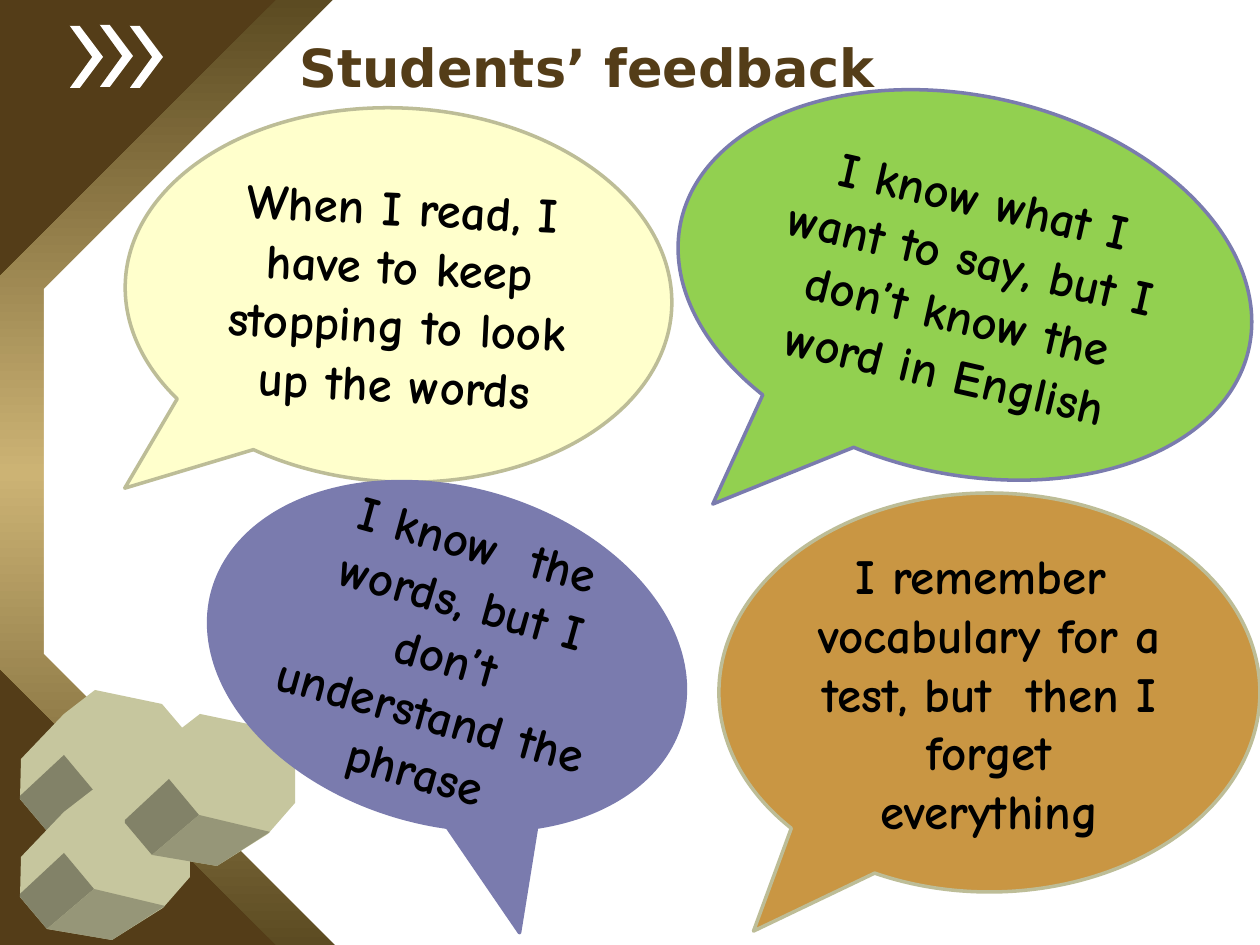
from copy import deepcopy

from pptx import Presentation
from pptx.dml.color import RGBColor
from pptx.enum.shapes import MSO_SHAPE as Shape
from pptx.enum.text import MSO_ANCHOR as Anchor, PP_ALIGN as Align
from pptx.oxml.ns import qn
from pptx.util import Pt

EMU_PER_PX = 914400 / 126
BROWN, WHITE, BLACK = "543D18", "FFFFFF", "000000"


def px(length):
    return round(length * EMU_PER_PX)


def color(code):
    return RGBColor.from_string(code)


class Painter:
    title_font = "DejaVu Sans"
    bubble_font = "Comic Neue"

    def __init__(self, page):
        self.page = page

    def background(self, fill):
        paint = self.page.background.fill
        paint.solid()
        paint.fore_color.rgb = color(fill)

    def finish(self, box, fill, line=None):
        box.shadow.inherit = False
        box.fill.solid()
        box.fill.fore_color.rgb = color(fill)
        if line:
            box.line.color.rgb = color(line)
            box.line.width = Pt(2)
        else:
            box.line.fill.background()

    def shape(self, kind, at, fill, adjust=(), line=None):
        box = self.page.shapes.add_shape(kind, *map(px, at))
        for index, value in enumerate(adjust):
            box.adjustments[index] = value
        self.finish(box, fill, line)
        return box

    def gradient(self, box, codes):
        box.fill.gradient()
        box.fill.gradient_angle = 90
        stop_list = box.element.spPr.find(qn("a:gradFill")).find(qn("a:gsLst"))
        stop_list.append(deepcopy(stop_list[-1]))
        for index, (stop, code) in enumerate(zip(box.fill.gradient_stops, codes)):
            stop.position = index / (len(codes) - 1)
            stop.color.rgb = color(code)

    def polygon(self, points, fill):
        builder = self.page.shapes.build_freeform(*points[0], scale=EMU_PER_PX)
        builder.add_line_segments(points[1:], close=True)
        self.finish(builder.convert_to_shape(), fill)

    def label(self, box, text, font, size, ink, align):
        frame = box.text_frame
        frame.word_wrap = True
        frame.vertical_anchor = Anchor.MIDDLE
        frame.text = text
        para = frame.paragraphs[0]
        para.alignment = align
        span = para.runs[0].font
        span.name, span.size, span.bold = font, Pt(size), True
        span.color.rgb = color(ink)

    def title(self, at, text):
        box = self.page.shapes.add_textbox(*map(px, at))
        self.label(box, text, self.title_font, 30, BROWN, Align.LEFT)

    def bubble(self, at, turn, tail, fill, line, text):
        box = self.shape(Shape.OVAL_CALLOUT, at, fill, tail, line)
        box.rotation = turn
        self.label(box, text, self.bubble_font, 28, BLACK, Align.CENTER)


deck = Presentation()
deck.slide_width, deck.slide_height = px(1260), px(945)
painter = Painter(deck.slides.add_slide(deck.slide_layouts[6]))

# Frame: gradient band around the white content area
painter.background(BROWN)
band = painter.shape(Shape.OCTAGON, (-1, 0, 945, 945), BROWN, [0.293])
painter.gradient(band, ["5C4B22", "CCB374", "5C4B22"])
painter.shape(Shape.RECTANGLE, (546, -1, 714, 946), WHITE)
painter.shape(Shape.OCTAGON, (44, -2, 945, 947), WHITE, [0.308])

# Three arrow marks, each a white chevron partly covered by a brown one
for left, top in [(70, 26), (40, 25), (10, 26)]:
    painter.shape(Shape.CHEVRON, (left, top, 93, 62), WHITE, [0.375])
    painter.shape(Shape.CHEVRON, (left - 11, top - 1, 93, 64), BROWN, [0.36])

# Stones: one outline with two shaded sides, placed three times
STONE_FACES = [
    ("C6C69E", [(95, 690), (162, 704), (190, 737), (190, 779), (163, 810),
                (112, 842), (47, 831), (20, 799), (21, 759), (64, 714)]),
    ("828268", [(20, 796), (64, 755), (94, 791), (47, 831), (20, 799)]),
    ("969678", [(94, 791), (165, 808), (112, 842), (47, 831)]),
]
for right, down in [(0, 0), (0, 98), (105, 24)]:
    for shade, points in STONE_FACES:
        painter.polygon([(x + right, y + down) for x, y in points], shade)

# Title and feedback bubbles
painter.title((287, 24, 951, 84), "Students’ feedback")
BUBBLES = [
    ((125, 108, 547, 374), 2.9, (-0.482, 0.553), "FFFFCC", "BDBD97",
     "When I read, I have to keep stopping to look up the words"),
    ((674, 96, 582, 378), 12.8, (-0.339, 0.713), "92D050", "7A7BAE",
     "I know what I want to say, but I don’t know the word in English"),
    ((204, 488, 486, 336), 15.5, (0.296, 0.736), "7A7BAE", "7A7BAE",
     "I know  the words, but I don’t understand the phrase"),
    ((719, 493, 541, 399), 0, (-0.436, 0.598), "C99643", "BDBD97",
     "I remember  vocabulary for a test, but  then I forget everything"),
]
for bubble in BUBBLES:
    painter.bubble(*bubble)

deck.save("out.pptx")
